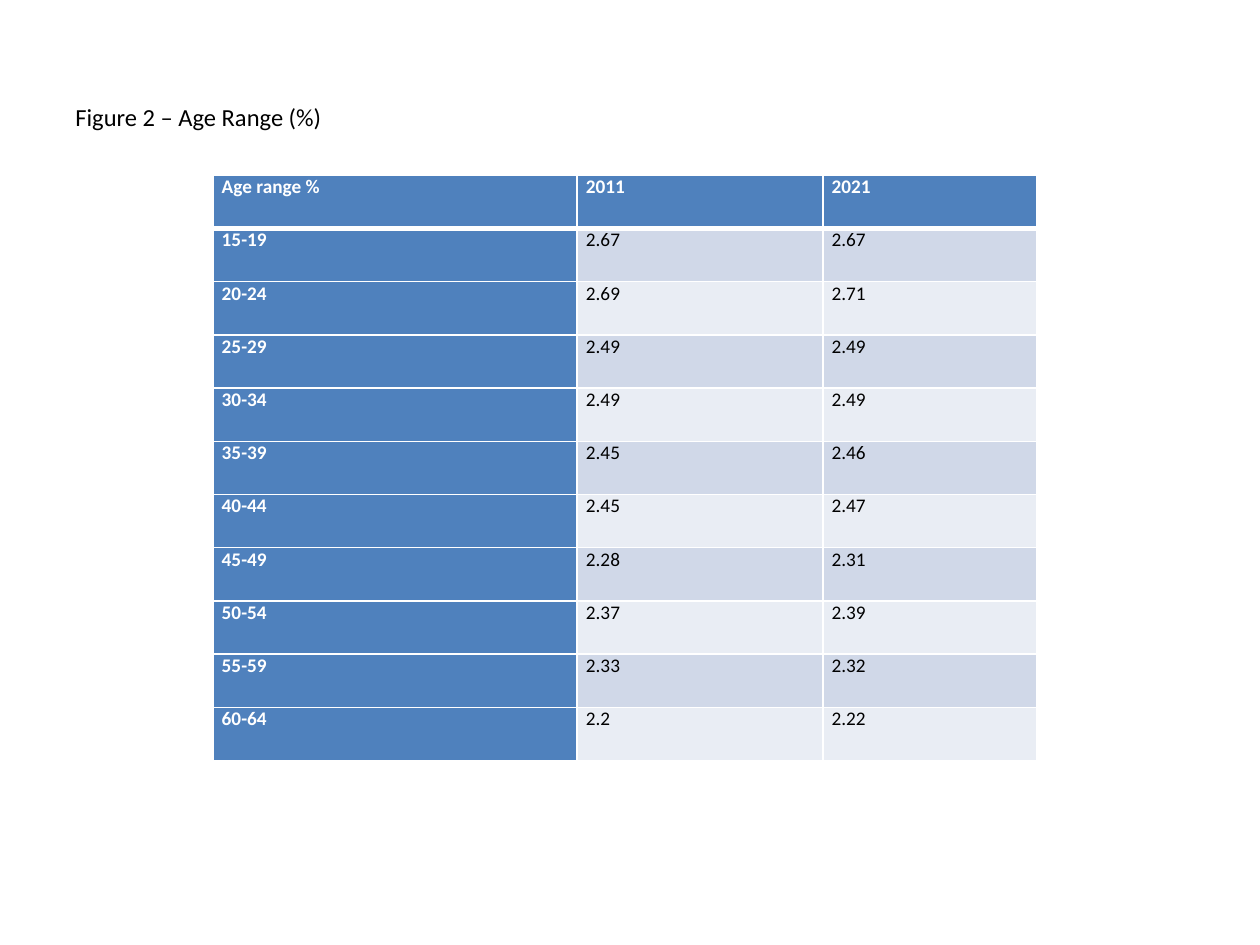
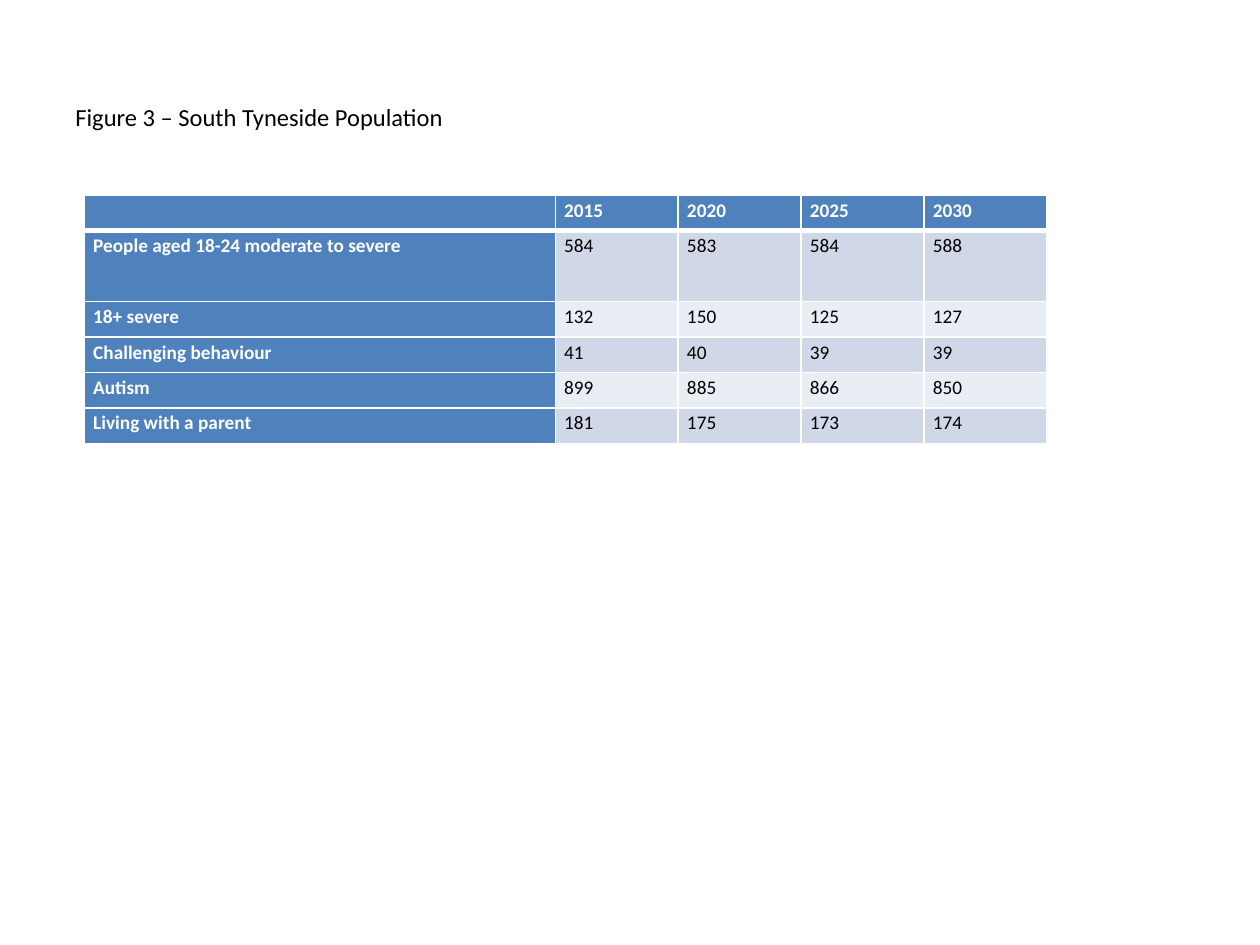
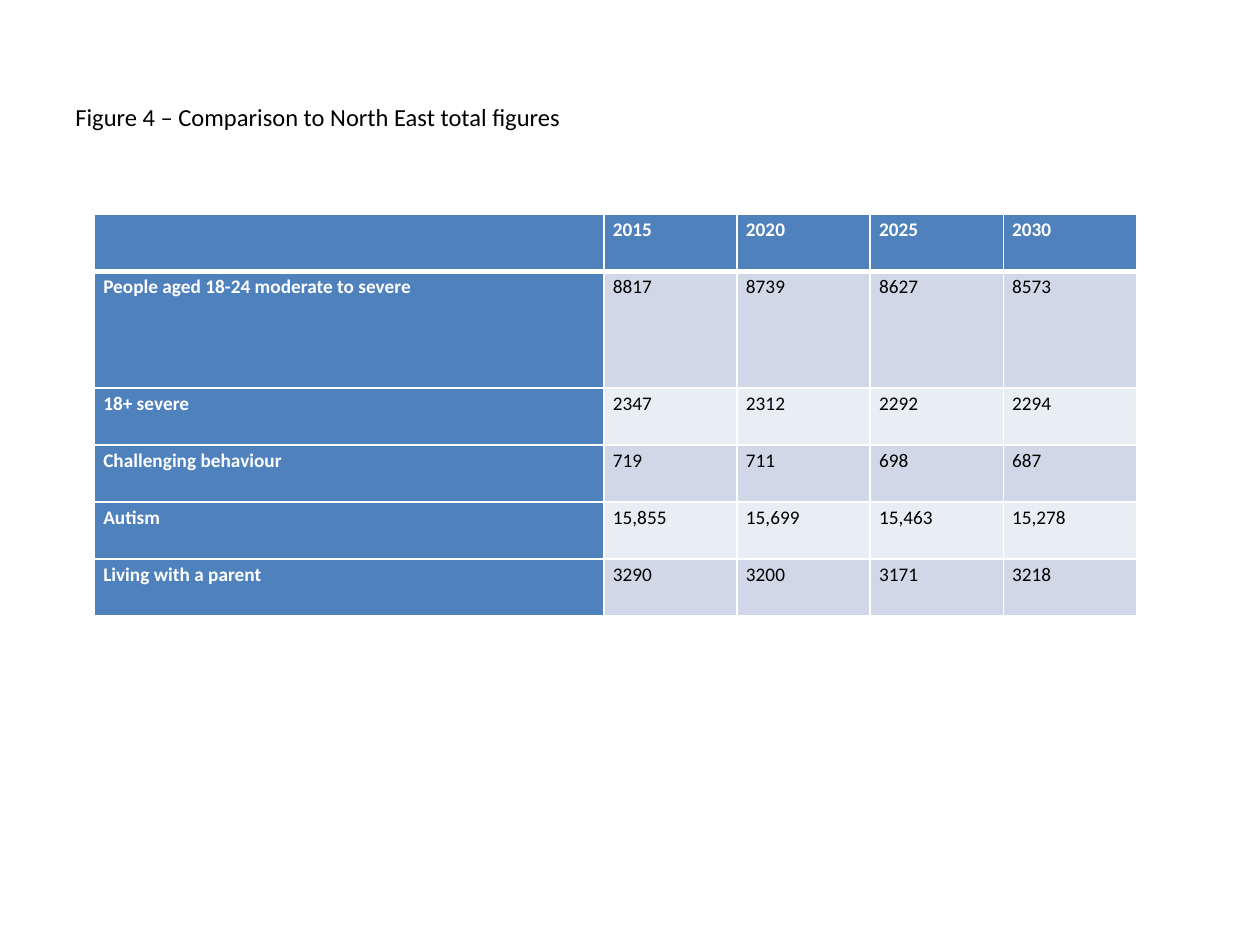
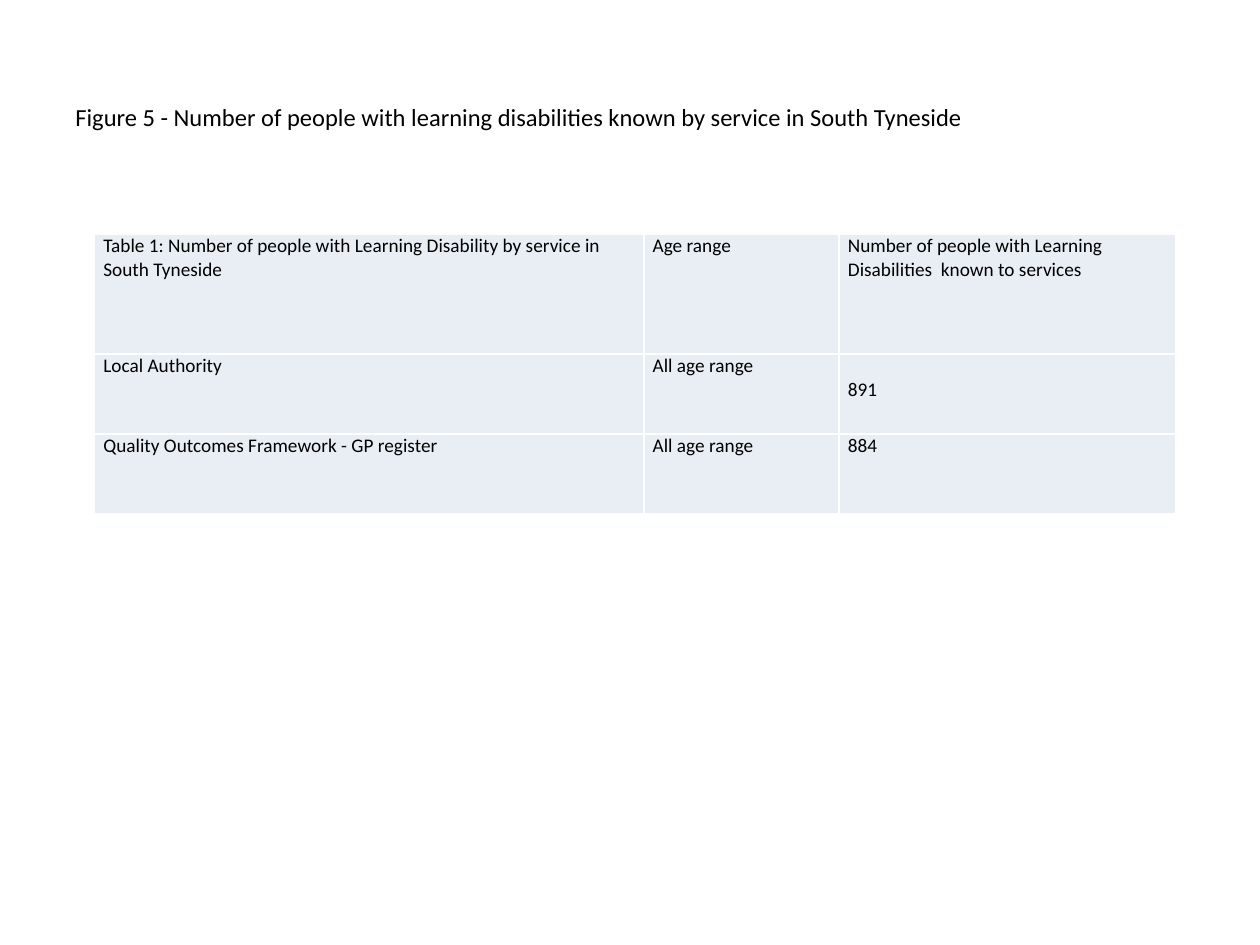
from dataclasses import dataclass

from lxml import etree
from pptx import Presentation, util as u
from pptx.dml import color
from pptx.enum import text
from pptx.oxml import ns


@dataclass(frozen=True)
class Theme:
    font: str = "Calibri"
    title_size: int = 14
    cell_size: int = 11
    ink: str = "000000"
    paper: str = "FFFFFF"
    accent: str = "4F81BD"
    band_dark: str = "D0D8E8"
    band_light: str = "E9EDF4"
    thin_rule: int = 1
    header_rule: int = 3


theme = Theme()
deck = Presentation()
deck.slide_width = u.Inches(10)
deck.slide_height = u.Inches(7.5)
column = deck.slide_width / 100
row = deck.slide_height / 100


def style_text(para, size, ink, bold=False):
    for span in para.runs:
        span.font.name = theme.font
        span.font.size = u.Pt(size)
        span.font.bold = bold
        span.font.color.rgb = color.RGBColor.from_string(ink)
    if not para.runs:
        etree.SubElement(para._p, ns.qn("a:endParaRPr"), sz=str(size * 100))


def rule_cell(cell, widths):
    properties = cell._tc.get_or_add_tcPr()
    for side, width in widths.items():
        line = etree.SubElement(properties, ns.qn(f"a:ln{side}"), w=str(u.Pt(width)))
        fill = etree.SubElement(line, ns.qn("a:solidFill"))
        etree.SubElement(fill, ns.qn("a:srgbClr"), val=theme.paper)


years = ["", "2015", "2020", "2025", "2030"]

figures = [
    dict(
        title="Figure 2 – Age Range (%)",
        place=(16.9, 18.53, 65.4, 62),
        columns=[2.89, 1.95, 1.7],
        rows=[1] * 11,
        headed=True,
        spacing=1,
        cells=[
            ["Age range %", "2011", "2021"],
            ["15-19", "2.67", "2.67"],
            ["20-24", "2.69", "2.71"],
            ["25-29", "2.49", "2.49"],
            ["30-34", "2.49", "2.49"],
            ["35-39", "2.45", "2.46"],
            ["40-44", "2.45", "2.47"],
            ["45-49", "2.28", "2.31"],
            ["50-54", "2.37", "2.39"],
            ["55-59", "2.33", "2.32"],
            ["60-64", "2.2", "2.22"],
        ],
    ),
    dict(
        title="Figure 3 – South Tyneside Population",
        place=(6.7, 20.67, 76.4, 26.27),
        columns=[3.83, 1, 1, 1, 1],
        rows=[1, 2, 1, 1, 1, 1],
        headed=True,
        spacing=1.15,
        cells=[
            years,
            ["People aged 18-24 moderate to severe", "584", "583", "584", "588"],
            ["18+ severe", "132", "150", "125", "127"],
            ["Challenging behaviour", "41", "40", "39", "39"],
            ["Autism", "899", "885", "866", "850"],
            ["Living with a parent", "181", "175", "173", "174"],
        ],
    ),
    dict(
        title="Figure 4 – Comparison to North East total figures",
        place=(7.5, 22.67, 82.7, 42.53),
        columns=[3.83, 1, 1, 1, 1],
        rows=[1, 2.05, 1, 1, 1, 1],
        headed=True,
        spacing=1.15,
        cells=[
            years,
            ["People aged 18-24 moderate to severe", "8817", "8739", "8627", "8573"],
            ["18+ severe", "2347", "2312", "2292", "2294"],
            ["Challenging behaviour", "719", "711", "698", "687"],
            ["Autism", "15,855", "15,699", "15,463", "15,278"],
            ["Living with a parent", "3290", "3200", "3171", "3218"],
        ],
    ),
    dict(
        title="Figure 5 - Number of people with learning disabilities known by service in South Tyneside",
        place=(7.5, 24.8, 85.8, 29.6),
        columns=[4.36, 1.55, 2.67],
        rows=[1.5, 1, 1],
        headed=False,
        spacing=1,
        lowered="891",
        cells=[
            [
                "Table 1: Number of people with Learning Disability by service in South Tyneside",
                "Age range",
                "Number of people with Learning Disabilities  known to services",
            ],
            ["Local Authority", "All age range", "891"],
            ["Quality Outcomes Framework - GP register", "All age range", "884"],
        ],
    ),
]

for figure in figures:
    page = deck.slides.add_slide(deck.slide_layouts[6])

    box = page.shapes.add_textbox(
        int(5 * column), int(4 * row), int(90 * column), int(16.67 * row)
    )
    box.text_frame.word_wrap = True
    box.text_frame.vertical_anchor = text.MSO_ANCHOR.MIDDLE
    box.text_frame.text = figure["title"]
    style_text(box.text_frame.paragraphs[0], theme.title_size, theme.ink)

    left, top, width, height = figure["place"]
    headed = figure["headed"]
    table = page.shapes.add_table(
        len(figure["rows"]), len(figure["columns"]),
        int(left * column), int(top * row), int(width * column), int(height * row),
    ).table
    table.first_row = table.first_col = headed
    table.horz_banding = headed

    for grid_column, share in zip(table.columns, figure["columns"]):
        grid_column.width = int(width * column * share / sum(figure["columns"]))
    for grid_row, share in zip(table.rows, figure["rows"]):
        grid_row.height = int(height * row * share / sum(figure["rows"]))

    for r, words in enumerate(figure["cells"]):
        for c, word in enumerate(words):
            cell = table.cell(r, c)
            heading = headed and (r == 0 or c == 0)
            banded = headed and r % 2 == 1
            widths = dict.fromkeys("LRTB", theme.thin_rule)
            if headed and r < 2:
                widths["B" if r == 0 else "T"] = theme.header_rule
            rule_cell(cell, widths)

            fill = theme.band_dark if banded else theme.band_light
            cell.fill.solid()
            cell.fill.fore_color.rgb = color.RGBColor.from_string(
                theme.accent if heading else fill
            )
            cell.margin_left = cell.margin_right = u.Inches(0.07)
            cell.margin_top = u.Inches(0.19 if word == figure.get("lowered") else 0)
            cell.margin_bottom = 0

            cell.text_frame.text = word
            para = cell.text_frame.paragraphs[0]
            para.line_spacing = figure["spacing"]
            style_text(para, theme.cell_size, theme.paper if heading else theme.ink, heading)

deck.save("out.pptx")
